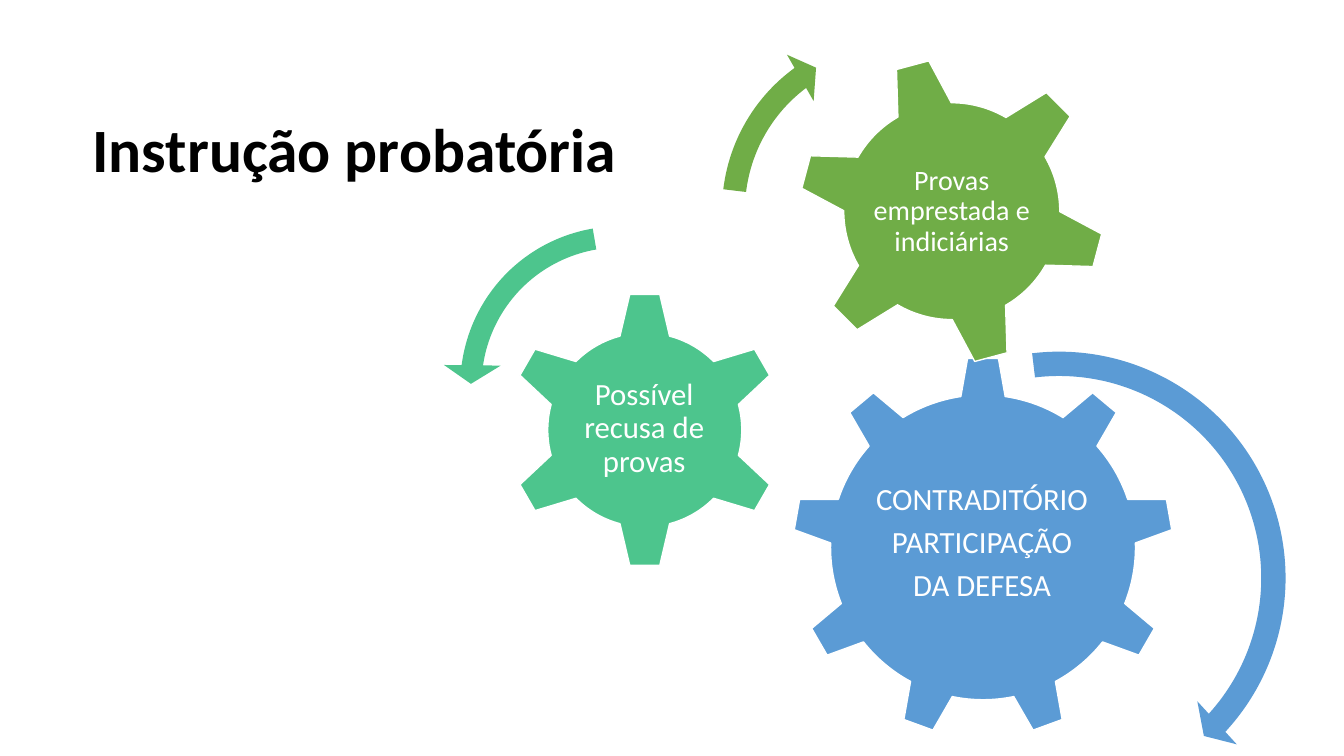
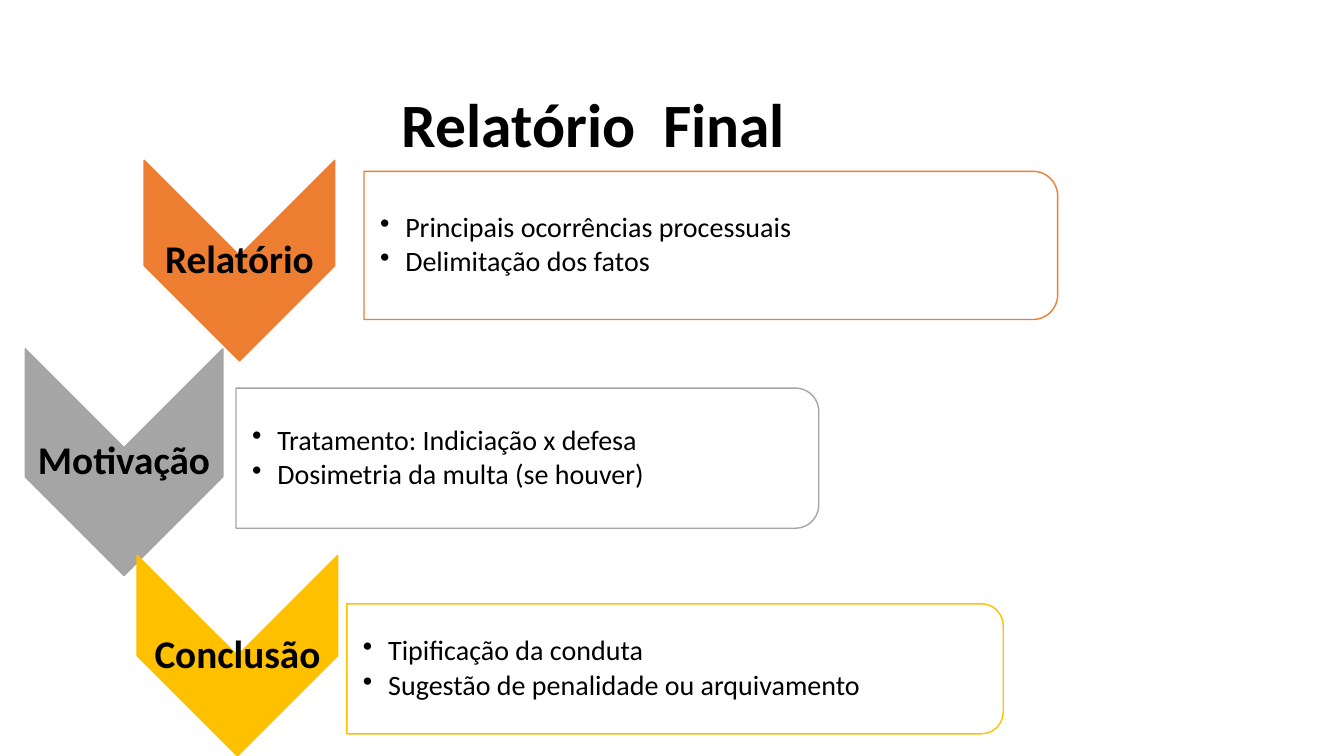
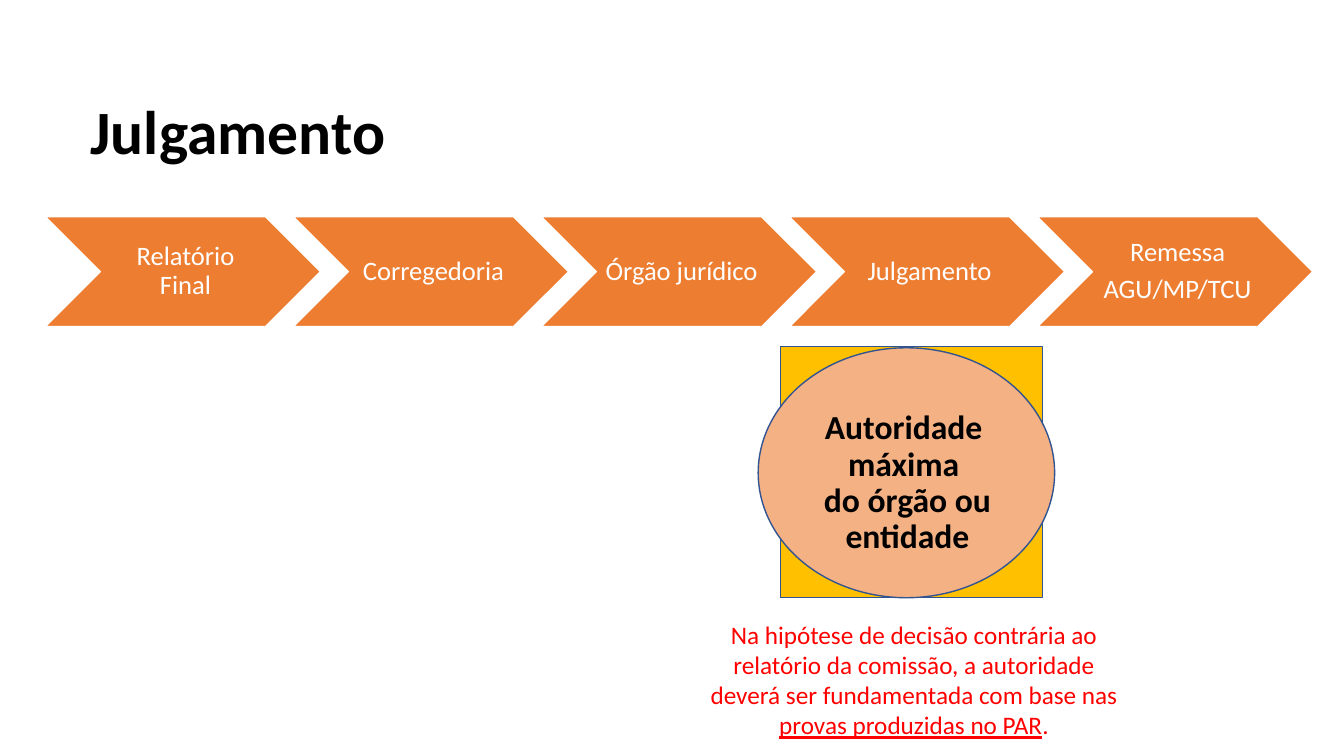
from lxml import etree
from pptx import Presentation
from pptx import util as u
from pptx.dml.color import RGBColor
from pptx.enum import shapes, text
from pptx.oxml import ns

EMU_PER_PX = 9144  # 100 px to the inch
SHAPES = shapes.MSO_SHAPE
CENTER, LEFT = text.PP_ALIGN.CENTER, text.PP_ALIGN.LEFT
MIDDLE, TOP = text.MSO_ANCHOR.MIDDLE, text.MSO_ANCHOR.TOP
COLORS = {
    "black": "000000", "white": "FFFFFF", "red": "FF0000",
    "blue": "5B9BD5", "teal": "4DC58D", "green": "70AD47",
    "orange": "ED7D31", "gray": "A5A5A5", "gold": "FFC000",
    "peach": "F4B183", "navy": "325491",
}


def px(length):
    return u.Emu(round(length * EMU_PER_PX))


def rgb(name):
    return RGBColor.from_string(COLORS[name])


class Deck:
    font = "Calibri"

    def __init__(self):
        self.presentation = Presentation()
        self.presentation.slide_width = px(1333)
        self.presentation.slide_height = px(750)
        self.slide = None

    def new_slide(self, title, left, top, align=LEFT):
        layout = self.presentation.slide_layouts[6]
        self.slide = self.presentation.slides.add_slide(layout)
        self.label((left, top, 1050, 70), [title], 44, "black", bold=True,
                   align=align, anchor=TOP, insets=(10, 5, 10, 5))

    def shape(self, kind, box, fill, line=None, rotation=0, adjustments=()):
        shape = self.slide.shapes.add_shape(kind, *map(px, box))
        shape.shadow.inherit = False
        shape.rotation = rotation
        for index, value in enumerate(adjustments):
            shape.adjustments[index] = value
        shape.fill.solid()
        shape.fill.fore_color.rgb = rgb(fill)
        if line:
            shape.line.color.rgb = rgb(line)
            shape.line.width = u.Pt(1)
        else:
            shape.line.fill.background()
        return shape

    def quarter_turned(self, kind, box, fill, line):
        """Turn a shape by 90 degrees so that it covers the box as seen."""
        left, top, width, height = box
        shift = (width - height) / 2
        frame = (left + shift, top - shift, height, width)
        return self.shape(kind, frame, fill, line, rotation=90)

    def label(self, box, paragraphs, size, color, **style):
        textbox = self.slide.shapes.add_textbox(*map(px, box))
        self.set_text(textbox, paragraphs, size, color, **style)

    def set_text(self, shape, paragraphs, size, color, bold=False,
                 align=CENTER, anchor=MIDDLE, insets=(3, 3, 3, 3), after=0,
                 spacing=0.9, bullets=False):
        """Fill a shape; a paragraph is a string or a list of (text, changes)."""
        frame = shape.text_frame
        frame.word_wrap = True
        frame.vertical_anchor = anchor
        (frame.margin_left, frame.margin_top,
         frame.margin_right, frame.margin_bottom) = map(px, insets)
        for index, content in enumerate(paragraphs):
            paragraph = frame.add_paragraph() if index else frame.paragraphs[0]
            paragraph.alignment = align
            paragraph.line_spacing = spacing
            paragraph.space_after = u.Pt(after)
            if bullets:
                self.bullet(paragraph)
            runs = [(content, {})] if isinstance(content, str) else content
            for words, changes in runs:
                run = paragraph.add_run()
                run.text = words
                run.font.name = self.font
                run.font.size = u.Pt(changes.get("size", size))
                run.font.bold = bold
                run.font.color.rgb = rgb(color)
                if changes.get("underline"):
                    run.font.underline = True

    def bullet(self, paragraph):
        properties = paragraph._p.get_or_add_pPr()
        properties.set("marL", str(px(25)))
        properties.set("indent", str(-px(25)))
        etree.SubElement(properties, ns.qn("a:buChar")).set("char", "•")


def evidence_slide(deck):
    deck.new_slide("Instrução probatória", 82, 113)
    provas = [[("Provas", {}), (" ", {"size": 12}),
               ("emprestada e indiciárias", {})]]
    gears = [
        (SHAPES.GEAR_9, (786, 354, 378, 378), 0, "blue",
         (861, 442, 226, 194), 22,
         ["CONTRADITÓRIO", "PARTICIPAÇÃO", "DA DEFESA"]),
        (SHAPES.GEAR_6, (502, 289, 275, 275), 0, "teal",
         (571, 358, 136, 135), 22, ["Possível recusa de provas"]),
        (SHAPES.GEAR_6, (791, 56, 306, 307), 345, "green",
         (858, 124, 172, 172), 20, provas),
    ]
    for kind, box, rotation, color, label_box, size, words in gears:
        deck.shape(kind, box, color, "white", rotation)
        deck.label(label_box, words, size, "white", after=7)

    arrows = [
        (SHAPES.CIRCULAR_ARROW, (809, 332, 483, 483), 0, "blue",
         (0.05, 2.99, 25.51, 157.89, 0.06)),
        (SHAPES.LEFT_CIRCULAR_ARROW, (439, 207, 351, 351), 13, "teal",
         (0.06, 4.3, 104.89, 148.38, 0.08)),
        (SHAPES.CIRCULAR_ARROW, (701, 19, 379, 379), 11.7, "green",
         (0.06, 3.94, 133.14, 105.08, 0.07)),
    ]
    for kind, box, rotation, color, adjustments in arrows:
        deck.shape(kind, box, color, None, rotation, adjustments)


def report_slide(deck):
    deck.new_slide("Relatório  Final", 64, 89, CENTER)
    steps = [
        ("Relatório", "orange", (143, 159, 189, 199), (361, 170, 688, 147),
         ["Principais ocorrências processuais", "Delimitação dos fatos"]),
        ("Motivação", "gray", (25, 346, 196, 225), (234, 385, 578, 139),
         ["Tratamento: Indiciação x defesa",
          "Dosimetria da multa (se houver)"]),
        ("Conclusão", "gold", (136, 551, 199, 199), (344, 599, 651, 129),
         ["Tipificação da conduta",
          "Sugestão de penalidade ou arquivamento"]),
    ]
    for name, color, chevron, panel, points in steps:
        deck.quarter_turned(SHAPES.CHEVRON, chevron, color, color)
        deck.label(chevron, [name], 28, "black", bold=True,
                   insets=(2, 2, 2, 2))
        deck.quarter_turned(SHAPES.ROUND_2_SAME_RECTANGLE, panel,
                            "white", color)
        deck.label(panel, points, 20, "black", align=LEFT, after=3,
                   insets=(16, 1, 1, 1), bullets=True)


def judgment_slide(deck):
    deck.new_slide("Julgamento", 80, 96)
    stages = [["Relatório Final"], ["Corregedoria"], ["Órgão jurídico"],
              ["Julgamento"], ["Remessa", "AGU/MP/TCU"]]
    for index, words in enumerate(stages):
        chevron = deck.shape(SHAPES.CHEVRON, (45 + 246 * index, 215, 273, 109),
                             "orange", "white")
        deck.set_text(chevron, words, 19, "white", after=6,
                      insets=(8, 3, 3, 3))

    deck.shape(SHAPES.RECTANGLE, (774, 344, 260, 249), "gold", "navy")
    deck.shape(SHAPES.OVAL, (752, 345, 294, 248), "peach", "navy")
    deck.label((804, 434, 192, 91),
               ["Autoridade ", "máxima ", "do órgão ou entidade"],
               24, "black", bold=True, insets=(0, 3, 0, 3))
    warning = [
        ("Na hipótese de decisão contrária ao relatório da comissão, a "
         "autoridade deverá ser fundamentada com base nas ", {}),
        ("provas produzidas no PAR", {"underline": True}),
        (".", {}),
    ]
    deck.label((693, 609, 427, 141), [warning], 18, "red", anchor=TOP,
               insets=(10, 5, 10, 5), spacing=1.0)


def main():
    deck = Deck()
    evidence_slide(deck)
    report_slide(deck)
    judgment_slide(deck)
    deck.presentation.save("out.pptx")


if __name__ == "__main__":
    main()
